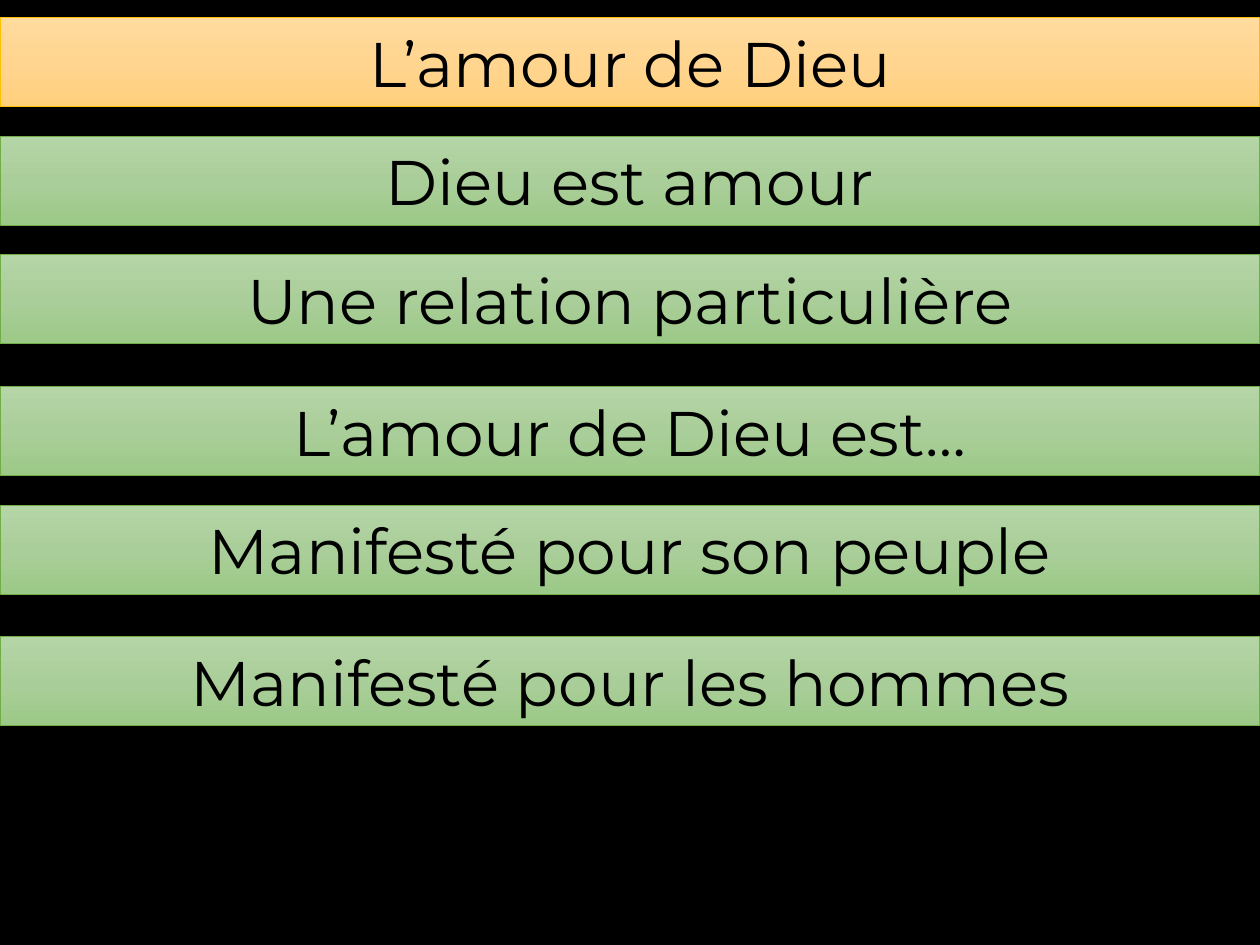
from copy import deepcopy

from pptx import Presentation
from pptx.dml.color import RGBColor
from pptx.enum import shapes, text
from pptx.oxml.ns import qn
from pptx.util import Pt

BLACK = RGBColor(0x00, 0x00, 0x00)
GOLD_LINE = RGBColor(0xFF, 0xC0, 0x00)
GOLD_STOPS = (RGBColor(0xFF, 0xDB, 0x9E), RGBColor(0xFF, 0xD5, 0x90), RGBColor(0xFF, 0xD0, 0x7C))
GREEN_LINE = RGBColor(0x70, 0xAD, 0x47)
GREEN_STOPS = (RGBColor(0xB5, 0xD5, 0xA7), RGBColor(0xAA, 0xCE, 0x9A), RGBColor(0x9C, 0xC9, 0x87))

SLIDE_WIDTH, SLIDE_HEIGHT = 720, 540
BANNER_HEIGHT = 51
TITLE = ("L’amour de Dieu", 10)
TOPICS = (
    ("Dieu est amour", 77.75),
    ("Une relation particulière", 145.4),
    ("L’amour de Dieu est…", 221),
    ("Manifesté pour son peuple", 288.6),
    ("Manifesté pour les hommes", 363.8),
)


def fill_downwards(shape, colors):
    """Fill with a three-colour vertical gradient, first colour on top."""
    fill = shape.fill
    fill.gradient()
    fill.gradient_angle = 270
    stop_list = shape._element.spPr.find(qn("a:gradFill")).find(qn("a:gsLst"))
    stop_list.insert(1, deepcopy(stop_list[0]))
    for stop, position, color in zip(fill.gradient_stops, (0, 0.5, 1), colors):
        stop.position = position
        stop.color.rgb = color


def add_banner(slide, left, top, width, height, wording, colors, line_color):
    banner = slide.shapes.add_shape(
        shapes.MSO_SHAPE.RECTANGLE, Pt(left), Pt(top), Pt(width), Pt(height))
    banner.shadow.inherit = False
    fill_downwards(banner, colors)
    banner.line.color.rgb = line_color
    banner.line.width = Pt(0.5)

    frame = banner.text_frame
    frame.word_wrap = True
    frame.auto_size = text.MSO_AUTO_SIZE.SHAPE_TO_FIT_TEXT
    paragraph = frame.paragraphs[0]
    paragraph.alignment = text.PP_ALIGN.CENTER
    run = paragraph.add_run()
    run.text = wording
    run.font.name = "Montserrat"
    run.font.size = Pt(36)
    run.font.color.rgb = BLACK


def add_outline_slide(presentation):
    slide = presentation.slides.add_slide(presentation.slide_layouts[6])
    slide.background.fill.solid()
    slide.background.fill.fore_color.rgb = BLACK
    wording, top = TITLE
    add_banner(slide, 0, top, SLIDE_WIDTH, BANNER_HEIGHT, wording, GOLD_STOPS, GOLD_LINE)
    for wording, top in TOPICS:
        add_banner(slide, 0, top, SLIDE_WIDTH, BANNER_HEIGHT, wording, GREEN_STOPS, GREEN_LINE)


def main():
    presentation = Presentation()
    presentation.slide_width = Pt(SLIDE_WIDTH)
    presentation.slide_height = Pt(SLIDE_HEIGHT)
    add_outline_slide(presentation)
    presentation.save("out.pptx")


if __name__ == "__main__":
    main()
